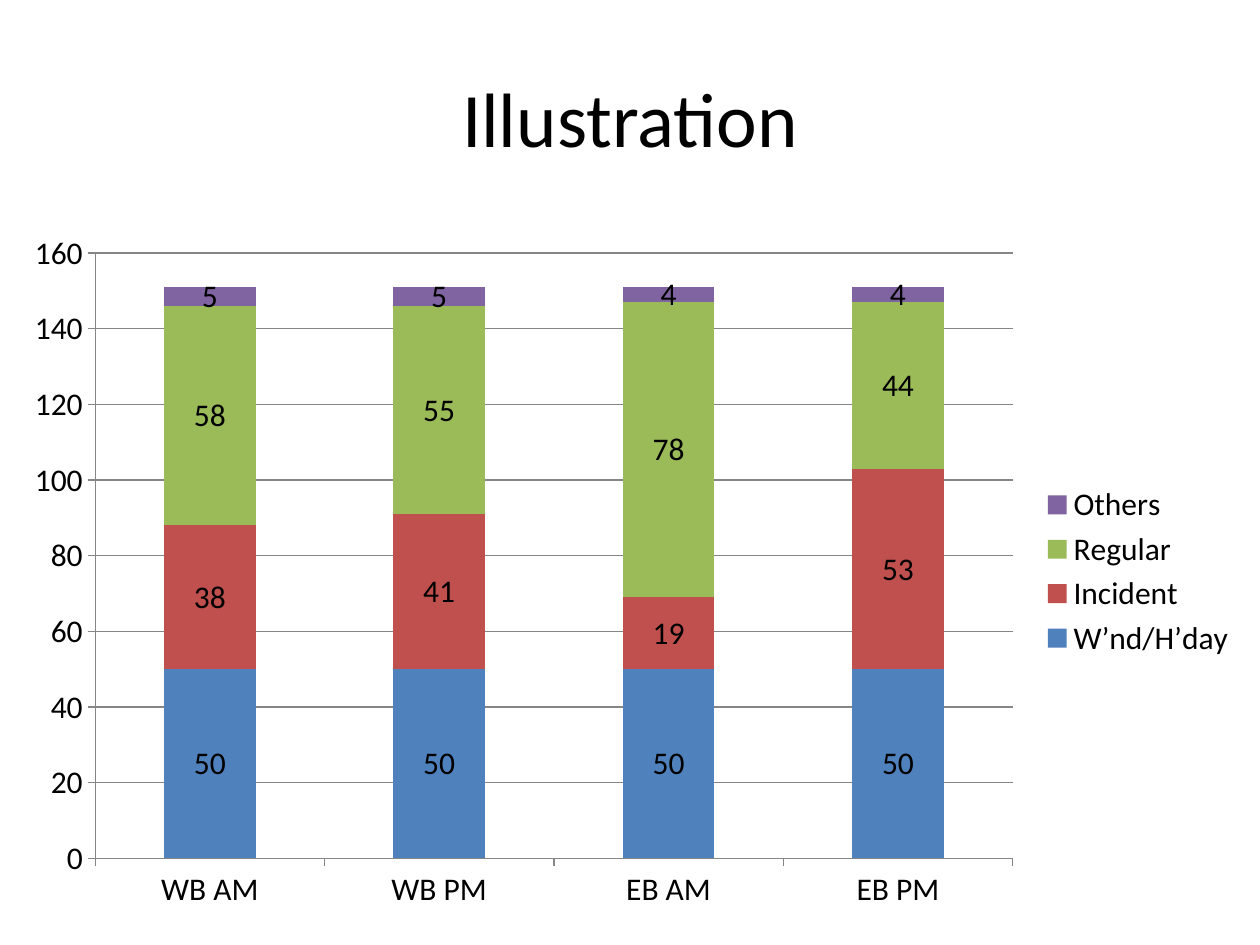
from dataclasses import dataclass

from pptx import Presentation
from pptx.chart.data import CategoryChartData
from pptx.dml.color import RGBColor
from pptx.enum.chart import XL_CHART_TYPE, XL_LEGEND_POSITION, XL_TICK_MARK
from pptx.enum.text import MSO_ANCHOR, PP_ALIGN
from pptx.util import Emu, Pt

PX = 914400 / 126
FONT = "Calibri"
BLACK = RGBColor(0x00, 0x00, 0x00)
GRAY = RGBColor(0x86, 0x86, 0x86)
BLUE = RGBColor(0x4F, 0x81, 0xBD)
RED = RGBColor(0xC0, 0x50, 0x4D)
GREEN = RGBColor(0x9B, 0xBB, 0x59)
PURPLE = RGBColor(0x80, 0x64, 0xA2)


@dataclass
class Series:
    name: str
    values: tuple[int, ...]
    color: RGBColor


@dataclass
class Box:
    left: int
    top: int
    width: int
    height: int

    def emu(self) -> list[Emu]:
        return [px(n) for n in (self.left, self.top, self.width, self.height)]


CATEGORIES = ("WB AM", "WB PM", "EB AM", "EB PM")
SERIES = (
    Series("W’nd/H’day", (50, 50, 50, 50), BLUE),
    Series("Incident", (38, 41, 19, 53), RED),
    Series("Regular", (58, 55, 78, 44), GREEN),
    Series("Others", (5, 5, 4, 4), PURPLE),
)


def px(n: int) -> Emu:
    return Emu(round(n * PX))


def set_font(font, size: int) -> None:
    font.name = FONT
    font.size = Pt(size)
    font.color.rgb = BLACK


def add_title(slide, text: str, box: Box) -> None:
    sp = slide.shapes.title
    sp.left, sp.top, sp.width, sp.height = box.emu()
    tf = sp.text_frame
    tf.vertical_anchor = MSO_ANCHOR.MIDDLE
    p = tf.paragraphs[0]
    p.alignment = PP_ALIGN.CENTER
    r = p.add_run()
    r.text = text
    set_font(r.font, 44)


def add_stacked_chart(slide, box: Box) -> None:
    data = CategoryChartData()
    data.categories = CATEGORIES
    for s in SERIES:
        data.add_series(s.name, s.values)
    chart = slide.shapes.add_chart(
        XL_CHART_TYPE.COLUMN_STACKED, *box.emu(), data).chart
    set_font(chart.font, 18)
    chart.has_title = False

    # Legend
    chart.has_legend = True
    chart.legend.position = XL_LEGEND_POSITION.RIGHT
    chart.legend.include_in_layout = False

    # Axes and gridlines
    for axis in (chart.category_axis, chart.value_axis):
        axis.major_tick_mark = XL_TICK_MARK.OUTSIDE
        axis.minor_tick_mark = XL_TICK_MARK.NONE
        axis.format.line.color.rgb = GRAY
    value_axis = chart.value_axis
    value_axis.minimum_scale, value_axis.maximum_scale = 0, 160
    value_axis.major_unit = 20
    value_axis.has_major_gridlines = True
    value_axis.major_gridlines.format.line.color.rgb = GRAY

    # Columns with their values
    plot = chart.plots[0]
    plot.gap_width, plot.overlap = 150, 100
    plot.vary_by_categories = False
    for series, s in zip(plot.series, SERIES):
        series.format.fill.solid()
        series.format.fill.fore_color.rgb = s.color
        labels = series.data_labels
        labels.show_value = True
        set_font(labels.font, 18)


def main() -> None:
    prs = Presentation()
    prs.slide_width, prs.slide_height = px(1260), px(945)
    slide = prs.slides.add_slide(prs.slide_layouts[5])
    add_title(slide, "Illustration", Box(63, 38, 1134, 157))
    add_stacked_chart(slide, Box(10, 220, 1239, 703))
    prs.save("out.pptx")


if __name__ == "__main__":
    main()
